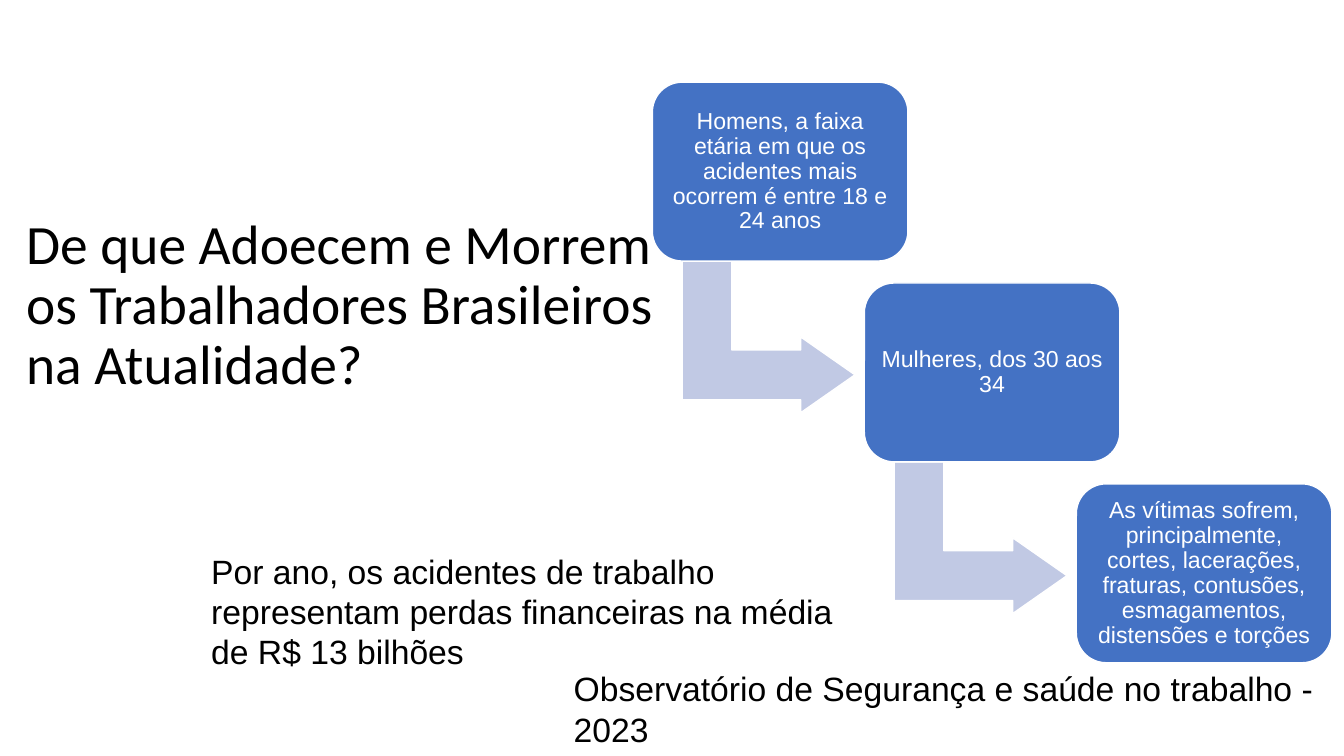
from dataclasses import dataclass

from pptx import Presentation
from pptx import util as u
from pptx.dml.color import RGBColor
from pptx.enum import shapes, text


@dataclass(frozen=True)
class Theme:
    """Colours, fonts and type sizes of the slide."""
    ink: str = "000000"
    paper: str = "FFFFFF"
    blue: str = "4472C4"
    pale: str = "C1C9E4"
    head: str = "Calibri"
    body: str = "Arial"
    big: float = 79.2
    mid: float = 48.1
    small: float = 33


THEME = Theme()
TITLE = "De que Adoecem e Morrem os Trabalhadores Brasileiros na Atualidade?"
STEPS = [
    "Homens, a faixa etária em que os acidentes mais ocorrem é entre 18 e 24 anos",
    "Mulheres, dos 30 aos 34",
    "As vítimas sofrem, principalmente, cortes, lacerações, fraturas, "
    "contusões, esmagamentos, distensões e torções",
]
COST = ("Por ano, os acidentes de trabalho representam perdas financeiras "
        "na média de R$ 13 bilhões")
SOURCE = "Observatório de Segurança e saúde no trabalho -  2023"


def write(frame, words, font, size, color):
    """Put one wrapped paragraph in a frame and format it."""
    frame.word_wrap = True
    frame.text = words
    para = frame.paragraphs[0]
    for run in para.runs:
        run.font.name = font
        run.font.size = u.Pt(size)
        run.font.color.rgb = RGBColor.from_string(color)
    return para


def paint(shape, color):
    """Give a shape a flat fill and a thin paper-coloured outline."""
    shape.shadow.inherit = False
    shape.fill.solid()
    shape.fill.fore_color.rgb = RGBColor.from_string(color)
    shape.line.color.rgb = RGBColor.from_string(THEME.paper)
    shape.line.width = u.Pt(2)


def add_title(slide, left, top, width, height):
    """Place the title, raised by one line within its box."""
    frame = slide.shapes.add_textbox(*map(u.Inches, (left, top, width, height))).text_frame
    frame.auto_size = text.MSO_AUTO_SIZE.NONE
    frame.vertical_anchor = text.MSO_ANCHOR.MIDDLE
    frame.margin_bottom = u.Inches(1.25)
    para = write(frame, TITLE, THEME.head, THEME.big, THEME.ink)
    para.line_spacing = 0.9


def add_note(slide, words, left, top, width, height):
    """Place a plain note."""
    box = slide.shapes.add_textbox(*map(u.Inches, (left, top, width, height)))
    write(box.text_frame, words, THEME.body, THEME.mid, THEME.ink)


def add_arrow(group, left, top, width, height):
    """Add a bent arrow that leads down and right to the next step."""
    arrow = group.shapes.add_shape(shapes.MSO_SHAPE.BENT_UP_ARROW,
                                   *map(u.Inches, (left, top, width, height)))
    arrow.rotation = 90
    for i, value in enumerate((0.328, 0.25, 0.358)):
        arrow.adjustments[i] = value
    paint(arrow, THEME.pale)


def add_card(group, words, left, top, width, height):
    """Add a rounded step card with centred text."""
    card = group.shapes.add_shape(shapes.MSO_SHAPE.ROUNDED_RECTANGLE,
                                  *map(u.Inches, (left, top, width, height)))
    card.adjustments[0] = 0.167
    paint(card, THEME.blue)
    frame = card.text_frame
    frame.vertical_anchor = text.MSO_ANCHOR.MIDDLE
    frame.margin_left = frame.margin_right = u.Inches(0.14)
    frame.margin_top = frame.margin_bottom = u.Inches(0.14)
    para = write(frame, words, THEME.body, THEME.small, THEME.paper)
    para.alignment = text.PP_ALIGN.CENTER
    para.line_spacing = 0.9


def add_stairs(slide, left, top, width, height):
    """Lay the steps as a descending staircase that fills the given box."""
    group = slide.shapes.add_group_shape()
    wide, high = 5.07, 3.55
    last = len(STEPS) - 1
    across, down = (width - wide) / last, (height - high) / last
    for i, words in enumerate(STEPS):
        x, y = left + i * across, top + i * down
        if i < last:
            add_arrow(group, x + 0.8, y + 3.34, 3.01, 3.43)
        add_card(group, words, x, y, wide, high)


def main():
    """Build and save the slide."""
    deck = Presentation()
    deck.slide_width, deck.slide_height = u.Inches(26.66), u.Inches(15)
    slide = deck.slides.add_slide(deck.slide_layouts[6])
    add_title(slide, 0.42, 5.02, 12.93, 3.34)
    add_stairs(slide, 12.94, 1.63, 13.48, 11.52)
    add_note(slide, SOURCE, 11.28, 13.21, 15.68, 0.91)
    add_note(slide, COST, 4.09, 10.87, 13.29, 1.72)
    deck.save("out.pptx")


if __name__ == "__main__":
    main()
